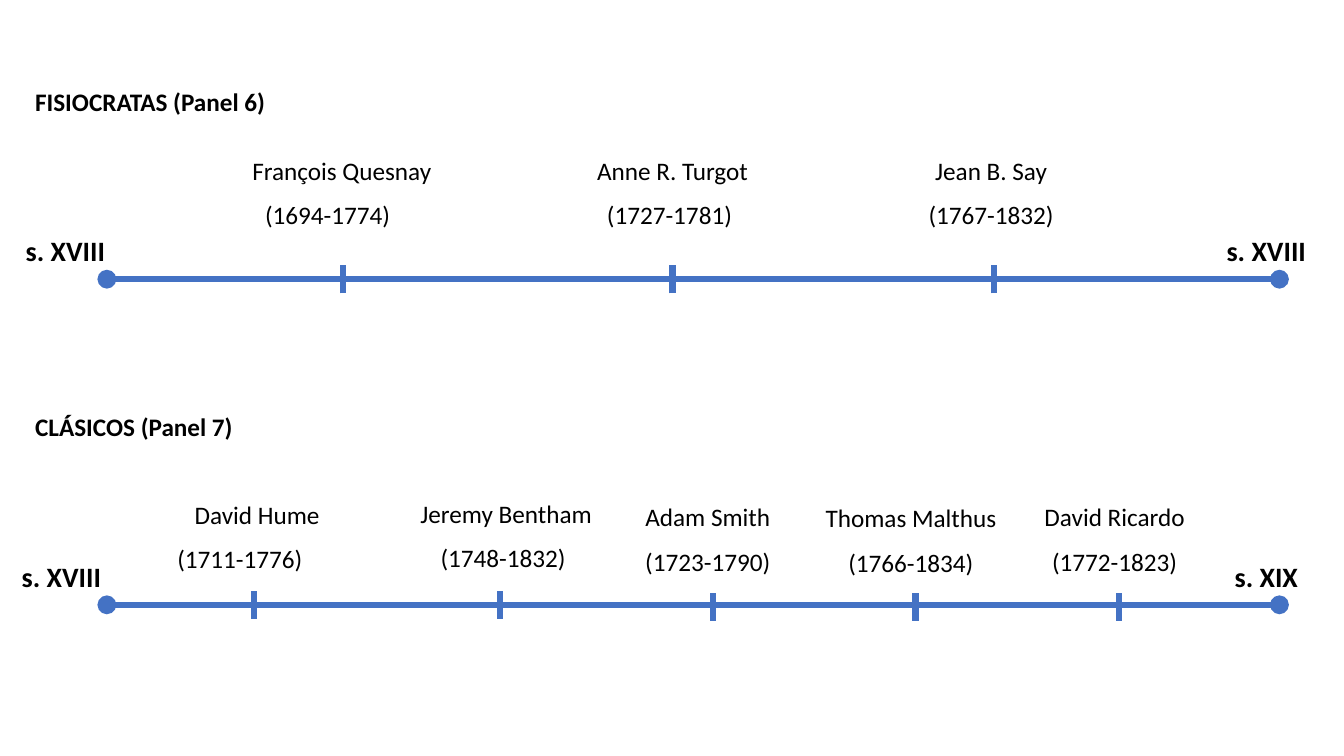
from dataclasses import dataclass

from pptx import Presentation
from pptx import util as u
from pptx.dml.color import RGBColor
from pptx.enum import shapes, text
from pptx.oxml.ns import qn
from lxml import etree

BLUE = RGBColor(0x44, 0x72, 0xC4)
BLACK = RGBColor(0, 0, 0)
FONT = "Calibri"
AXIS_LENGTH = 11.63
TICK_LENGTH = 0.28
LABEL_WIDTH = 1.06

# Paragraph formats
HEADING = {"line_spacing": 1.15, "space_after": u.Pt(10)}
CENTURY = {**HEADING, "alignment": text.PP_ALIGN.CENTER}
SPACED = {"alignment": text.PP_ALIGN.CENTER, "space_after": u.Pt(10)}
COMPACT = {"alignment": text.PP_ALIGN.CENTER, "line_spacing": 1.5}


@dataclass
class Thinker:
    name: str
    dates: str
    left: float
    top: float  # distance of the text above the axis
    tick: float
    width: float = 2.12
    height: float = 0.85
    tick_drop: float = 0
    style: str = "spaced"
    name_shift: float = 0  # sideways move of the centred line
    dates_shift: float = 0


def add_text(parent, box, lines, style, size, bold=False, wrap=False, shifts=(0, 0)):
    """Write one paragraph per line, each moved sideways by its margin."""
    text_box = parent.add_textbox(*map(u.Inches, box))
    frame = text_box.text_frame
    frame.word_wrap = wrap
    for index, (line, shift) in enumerate(zip(lines, shifts)):
        paragraph = frame.paragraphs[0] if index == 0 else frame.add_paragraph()
        for key, value in style.items():
            setattr(paragraph, key, value)
        if shift:
            margin = "marL" if shift > 0 else "marR"
            paragraph._p.get_or_add_pPr().set(margin, str(u.Inches(2 * abs(shift))))
        run = paragraph.add_run()
        run.text = line
        for key, value in {"name": FONT, "size": u.Pt(size), "bold": bold}.items():
            setattr(run.font, key, value)
        run.font.color.rgb = BLACK


def add_line(parent, x1, y1, x2, y2, oval_ends=False):
    connector = parent.add_connector(
        shapes.MSO_CONNECTOR.STRAIGHT, *map(u.Inches, (x1, y1, x2, y2)))
    connector.line.color.rgb = BLUE
    connector.line.width = u.Pt(4.5)
    if oval_ends:
        outline = connector.line._get_or_add_ln()
        for end in ("a:headEnd", "a:tailEnd"):
            etree.SubElement(outline, qn(end), type="oval")
    etree.SubElement(connector._element.spPr, qn("a:effectLst"))


def add_thinker(slide, axis, thinker):
    """Name, dates and tick, grouped."""
    group = slide.shapes.add_group_shape().shapes
    spaced = thinker.style == "spaced"
    add_text(group, (thinker.left, axis - thinker.top, thinker.width, thinker.height),
             (thinker.name, thinker.dates), SPACED if spaced else COMPACT, 18,
             wrap=spaced, shifts=(thinker.name_shift, thinker.dates_shift))
    middle = axis + thinker.tick_drop
    add_line(group, thinker.tick, middle + TICK_LENGTH / 2,
             thinker.tick, middle - TICK_LENGTH / 2)


def add_timeline(slide, left, axis, heading, heading_width, centuries, thinkers):
    # Heading
    add_text(slide.shapes, (0.25, axis - 2.01, heading_width, 0.43),
             [heading], HEADING, 18, bold=True)
    # Axis
    add_line(slide.shapes, left, axis, left + AXIS_LENGTH, axis, oval_ends=True)
    # Centuries at both ends
    for label, center in centuries:
        add_text(slide.shapes, (center - LABEL_WIDTH / 2, axis - 0.55, LABEL_WIDTH, 0.47),
                 [label], CENTURY, 20, bold=True)
    # Thinkers
    for thinker in thinkers:
        add_thinker(slide, axis, thinker)


PHYSIOCRATS = [
    Thinker("François Quesnay", "(1694-1774)", 2.33, 1.28, 3.4, dates_shift=-0.14),
    Thinker("Anne R. Turgot", "(1727-1781)", 5.58, 1.28, 6.67, name_shift=0.03),
    Thinker("Jean B. Say", "(1767-1832)", 8.77, 1.28, 9.86),
]
LOWER = {"height": 0.96, "tick_drop": 0.02, "style": "compact"}
CLASSICS = [
    Thinker("David Hume", "(1711-1776)", 1.46, 1.1, 2.52,
            name_shift=0.03, dates_shift=-0.14),
    Thinker("Jeremy Bentham", "(1748-1832)", 3.88, 1.11, 4.96,
            name_shift=0.08, dates_shift=0.05),
    Thinker("Adam Smith", "(1723-1790)", 6.29, 1.23, 7.07, width=1.46, **LOWER),
    Thinker("Thomas Malthus", "(1766-1834)", 8.08, 1.22, 9.08, width=1.91, **LOWER),
    Thinker("David Ricardo", "(1772-1823)", 10.25, 1.23, 11.1, width=1.61, **LOWER),
]


def main():
    presentation = Presentation()
    presentation.slide_width = u.Inches(13.33)
    presentation.slide_height = u.Inches(7.5)
    slide = presentation.slides.add_slide(presentation.slide_layouts[6])
    add_timeline(slide, 1.06, 2.77, "FISIOCRATAS (Panel 6)", 2.5,
                 [("s. XVIII", 0.65), ("s. XVIII", 12.56)], PHYSIOCRATS)
    add_timeline(slide, 1.06, 6, "CLÁSICOS (Panel 7)", 2.18,
                 [("s. XVIII", 0.61), ("s. XIX", 12.56)], CLASSICS)
    presentation.save("out.pptx")


if __name__ == "__main__":
    main()
